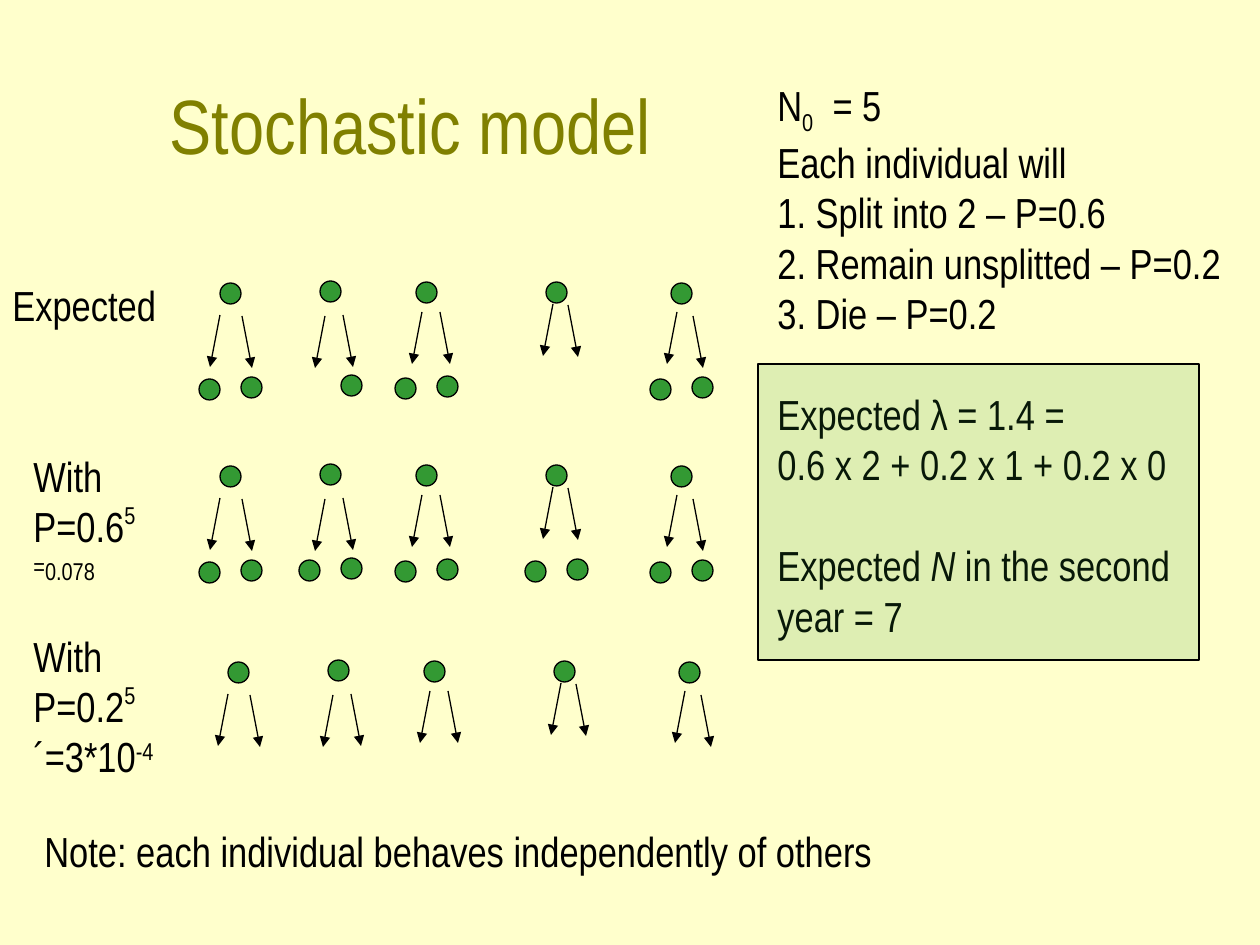
from lxml import etree
from pptx import Presentation
from pptx import util as u
from pptx.dml.color import RGBColor
from pptx.enum import shapes, text
from pptx.oxml.ns import qn

THEME = {
    "font": "Arial Narrow",
    "bg": RGBColor.from_string("FFFFCC"),
    "title": RGBColor.from_string("808000"),
    "ink": RGBColor.from_string("000000"),
    "green": RGBColor.from_string("339933"),
    "title_pt": 44,
    "body_pt": 24,
    "line_pt": 0.75,
    "blank_line_pt": 28.8,
    "tint": 16000,
}
PX = 914400 / 126  # EMU per px


def px(*lengths):
    return [u.Emu(round(n * PX)) for n in lengths]


def add_text(box, paras, size=THEME["body_pt"], color=THEME["ink"], **frame):
    """Each paragraph is (space before, runs); a run is (text, baseline %, italic)."""
    tf = s.shapes.add_textbox(*px(*box)).text_frame
    settings = {"word_wrap": True, "auto_size": text.MSO_AUTO_SIZE.SHAPE_TO_FIT_TEXT}
    for name, value in {**settings, **frame}.items():
        setattr(tf, name, value)
    for i, (gap, runs) in enumerate(paras):
        p = tf.paragraphs[0] if i == 0 else tf.add_paragraph()
        if gap:
            p.space_before = u.Pt(gap)
        for content, base, italic in runs:
            r = p.add_run()
            r.text = content
            look = {"name": THEME["font"], "size": u.Pt(size), "italic": italic}
            for name, value in look.items():
                setattr(r.font, name, value)
            r.font.color.rgb = color
            if base:
                r._r.get_or_add_rPr().set("baseline", str(base * 1000))
    return tf


prs = Presentation()
prs.slide_width, prs.slide_height = px(1260, 945)
s = prs.slides.add_slide(prs.slide_layouts[6])
s.background.fill.solid()
s.background.fill.fore_color.rgb = THEME["bg"]

# Title
tf = add_text((-125, 45, 1071, 158), [(0, [("Stochastic model", 0, False)])],
              THEME["title_pt"], THEME["title"],
              auto_size=text.MSO_AUTO_SIZE.NONE,
              vertical_anchor=text.MSO_ANCHOR.MIDDLE)
tf.paragraphs[0].alignment = text.PP_ALIGN.CENTER

# Individuals: parent corner, then start of left and right arrow from that corner
individuals = [
    ((220, 283), (0, 32), (22, 33)),
    ((320, 281), (5, 35), (23, 34)),
    ((416, 282), (6, 30), (24, 30)),
    ((546, 282), (7, 22), (22, 23)),
    ((671, 283), (6, 29), (22, 33)),
]
# Scenarios: shift from the first row, then surviving offspring per individual
LEFT, RIGHT = (-21, 96), (21, 94)
both = (LEFT, RIGHT)
scenarios = [
    ((0, 0), [both, (RIGHT,), both, (), both]),
    ((0, 183), [both] * 5),
    ((8, 379), [()] * 5),
]
DOT = 21
ARROW = 52
for (dx, dy), offspring in scenarios:
    for ((x, y), left, right), children in zip(individuals, offspring):
        x, y = x + dx, y + dy
        for cx, cy in ((0, 0), *children):
            sp = s.shapes.add_shape(shapes.MSO_SHAPE.OVAL, *px(x + cx, y + cy, DOT, DOT))
            sp.shadow.inherit = False
            sp.fill.solid()
            sp.fill.fore_color.rgb = THEME["green"]
            sp.line.color.rgb = THEME["ink"]
            sp.line.width = u.Pt(THEME["line_pt"])
        for (ax, ay), lean in ((left, -10), (right, 10)):
            x1, y1 = x + ax, y + ay
            cn = s.shapes.add_connector(shapes.MSO_CONNECTOR.STRAIGHT,
                                        *px(x1, y1, x1 + lean, y1 + ARROW))
            cn.line.color.rgb = THEME["ink"]
            cn.line.width = u.Pt(THEME["line_pt"])
            etree.SubElement(cn.line._get_or_add_ln(), qn("a:tailEnd"), type="triangle")
            etree.SubElement(cn._element.spPr, qn("a:effectLst"))

# Model rules and expected outcome
gap = THEME["blank_line_pt"]
add_text((765, 73, 485, 726), [
    (0, [("N", 0, False), ("0", -25, False), ("  = 5", 0, False)]),
    (0, [("Each individual will", 0, False)]),
    (0, [("1. Split into 2 – P=0.6", 0, False)]),
    (0, [("2. Remain unsplitted – P=0.2", 0, False)]),
    (0, [("3. Die – P=0.2", 0, False)]),
    (gap, [("Expected λ = 1.4 =", 0, False)]),
    (0, [("0.6 x 2 + 0.2 x 1 + 0.2 x 0", 0, False)]),
    (gap, [("Expected ", 0, False), ("N ", 0, True), ("in the second year = 7", 0, False)]),
])

# Row labels
add_text((21, 444, 158, 165), [
    (0, [("With P=0.6", 0, False), ("5", 42, False)]),
    (0, [("=", 42, False), ("0.078", 30, False)]),
])
add_text((21, 624, 158, 165), [
    (0, [("With P=0.2", 0, False), ("5", 42, False),
         ("´=3*10", 0, False), ("-4", 30, False)]),
])
add_text((0, 273, 179, 63), [(0, [("Expected", 0, False)])])

# Tinted frame over the expected outcome
sp = s.shapes.add_shape(shapes.MSO_SHAPE.RECTANGLE, *px(758, 364, 441, 296))
sp.shadow.inherit = False
sp.fill.solid()
sp.fill.fore_color.rgb = THEME["green"]
tint = sp._element.spPr.find(".//" + qn("a:srgbClr"))
etree.SubElement(tint, qn("a:alpha"), val=str(THEME["tint"]))
sp.line.color.rgb = THEME["ink"]
sp.line.width = u.Pt(THEME["line_pt"])

# Note
add_text((32, 819, 1187, 63),
         [(0, [("Note: each individual behaves independently of others", 0, False)])])

prs.save("out.pptx")
